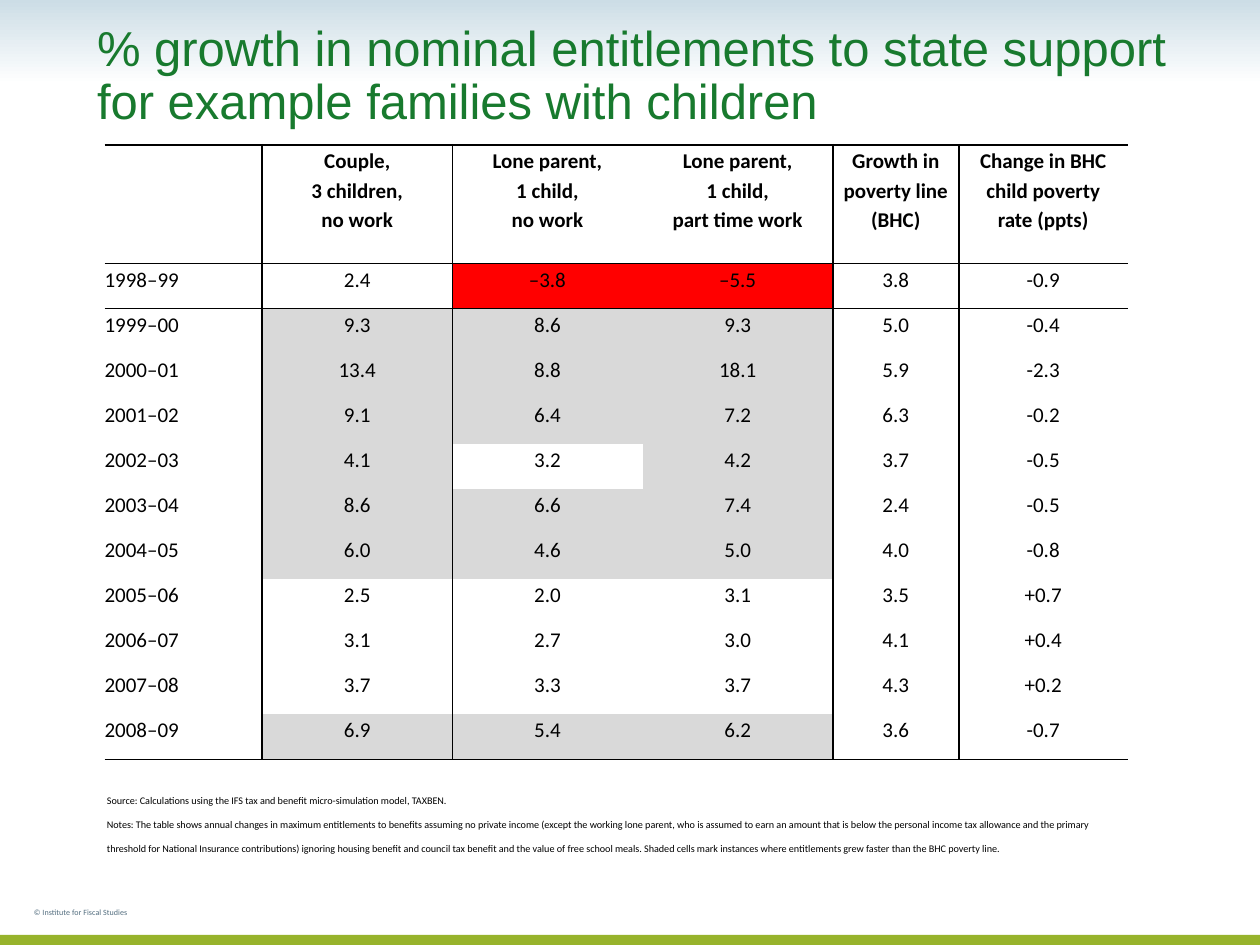
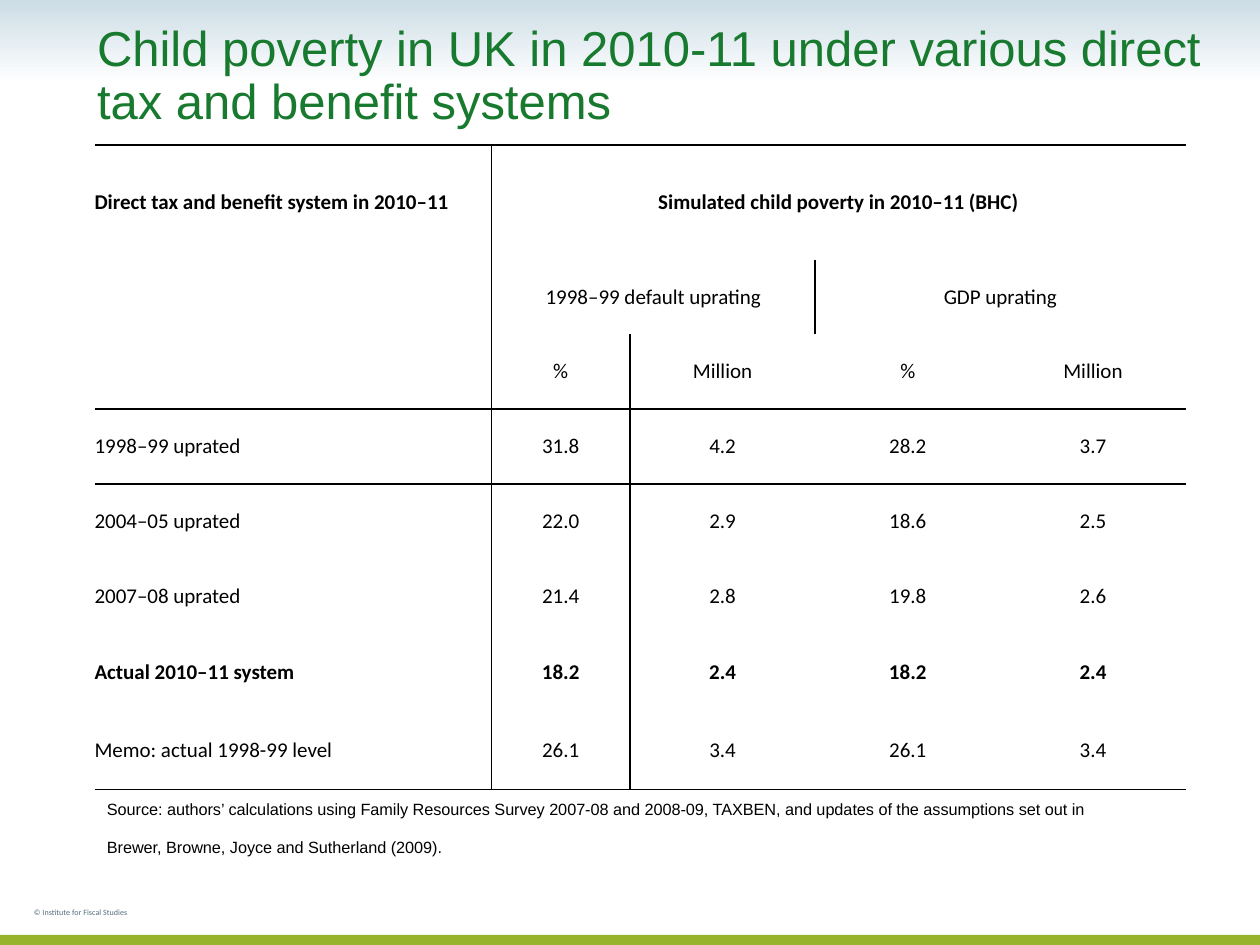
from pptx import Presentation
from pptx.dml.color import RGBColor
from pptx.enum.shapes import MSO_SHAPE as SHAPE
from pptx.enum.text import MSO_ANCHOR as ANCHOR, MSO_AUTO_SIZE as AUTO, PP_ALIGN as ALIGN
from pptx.oxml.ns import qn
from pptx.util import Inches, Pt
from lxml.etree import SubElement

GREEN, LIME, SLATE, SKY = "187A2E", "97B32C", "526D7F", "CCDDE6"
BLACK, WHITE, GREY, RED = "000000", "FFFFFF", "D9D9D9", "FF0000"
PLAIN_TABLE = "{2D5ABB26-0587-4C30-8999-92F81FD0307C}"

ENTITLEMENT_HEADS = [
    "", "Couple,\v3 children,\vno work", "Lone parent,\v1 child,\vno work",
    "Lone parent,\v1 child,\vpart time work", "Growth in poverty line (BHC)",
    "Change in BHC child poverty rate (ppts)",
]
ENTITLEMENT_YEARS = [
    ["1998–99", "2.4", "–3.8", "–5.5", "3.8", "-0.9"],
    ["1999–00", "9.3", "8.6", "9.3", "5.0", "-0.4"],
    ["2000–01", "13.4", "8.8", "18.1", "5.9", "-2.3"],
    ["2001–02", "9.1", "6.4", "7.2", "6.3", "-0.2"],
    ["2002–03", "4.1", "3.2", "4.2", "3.7", "-0.5"],
    ["2003–04", "8.6", "6.6", "7.4", "2.4", "-0.5"],
    ["2004–05", "6.0", "4.6", "5.0", "4.0", "-0.8"],
    ["2005–06", "2.5", "2.0", "3.1", "3.5", "+0.7"],
    ["2006–07", "3.1", "2.7", "3.0", "4.1", "+0.4"],
    ["2007–08", "3.7", "3.3", "3.7", "4.3", "+0.2"],
    ["2008–09", "6.9", "5.4", "6.2", "3.6", "-0.7"],
]
POVERTY_ROWS = [
    ["Direct tax and benefit system in 2010–11",
     "Simulated child poverty in 2010–11 (BHC)", "", "", ""],
    ["", "1998–99 default uprating", "", "GDP uprating", ""],
    ["", "%", "Million", "%", "Million"],
    ["1998–99 uprated", "31.8", "4.2", "28.2", "3.7"],
    ["2004–05 uprated", "22.0", "2.9", "18.6", "2.5"],
    ["2007–08 uprated", "21.4", "2.8", "19.8", "2.6"],
    ["Actual 2010–11 system", "18.2", "2.4", "18.2", "2.4"],
    ["Memo: actual 1998-99 level", "26.1", "3.4", "26.1", "3.4"],
]


def rgb(value):
    return RGBColor.from_string(value)


def write(frame, text, size=12, font="Calibri", color=BLACK, bold=False,
          align=ALIGN.LEFT, spacing=None, after=None, lowered=False):
    frame.word_wrap = True
    for index, line in enumerate(text.split("\n")):
        paragraph = frame.add_paragraph() if index else frame.paragraphs[0]
        paragraph.text = line
        paragraph.alignment = align
        if spacing:
            paragraph.line_spacing = spacing
        if after:
            paragraph.space_after = Pt(after)
        for run in paragraph.runs:
            run.font.size, run.font.name, run.font.bold = Pt(size), font, bold
            run.font.color.rgb = rgb(color)
            if lowered:
                run._r.get_or_add_rPr().set("baseline", "-25000")
        for line_break in paragraph._p.findall(qn("a:br")):
            SubElement(line_break, qn("a:rPr"), sz=str(size * 100))


def add_band(slide, top, height):
    band = slide.shapes.add_shape(SHAPE.RECTANGLE, 0, Inches(top), Inches(10), Inches(height))
    band.shadow.inherit = False
    band.line.fill.background()
    return band


def decorate_master(prs, slide):
    sky = add_band(slide, 0, 0.67)
    sky.fill.gradient()
    sky.fill.gradient_angle = 270
    for stop, color, position in zip(sky.fill.gradient_stops, (SKY, WHITE), (0, 1)):
        stop.color.rgb = rgb(color)
        stop.position = position
    base = add_band(slide, 7.42, 0.08)
    base.fill.solid()
    base.fill.fore_color.rgb = rgb(LIME)
    for order, band in enumerate((sky, base)):
        band._element.nvSpPr.cNvPr.set("id", str(101 + order))
        prs.slide_master.shapes.element.insert(2 + order, band._element)


def add_text(slide, box, text, anchor=ANCHOR.TOP, **style):
    area = slide.shapes.add_textbox(*map(Inches, box))
    area.text_frame.vertical_anchor = anchor
    write(area.text_frame, text, **style)


def add_titled_slide(prs, heading):
    slide = prs.slides.add_slide(prs.slide_layouts[5])
    title = slide.shapes.title
    title.left, title.top, title.width, title.height = map(Inches, (0.67, 0, 9.06, 1.08))
    frame = title.text_frame
    frame.auto_size = AUTO.NONE
    frame.vertical_anchor = ANCHOR.BOTTOM
    write(frame, heading, size=28, font="Arial", color=GREEN, spacing=0.9)
    add_text(slide, (0.17, 7.08, 2.75, 0.25), "© Institute for Fiscal Studies",
             size=8, color=SLATE, lowered=True)
    return slide


def rule_cell(cell, sides):
    properties = cell._tc.get_or_add_tcPr()
    for side, width in sides.items():
        if width:
            line = SubElement(properties, qn(f"a:ln{side}"), w=str(Pt(width)))
            fill = SubElement(line, qn("a:solidFill"))
            SubElement(fill, qn("a:srgbClr"), val=BLACK)


def add_ruled_table(slide, box, rows, widths, heights, dividers, head_rows,
                    bold_rows, anchor, spacing=None, merges=(), shade=None, last_inset=0):
    table = slide.shapes.add_table(len(rows), len(widths), *map(Inches, box)).table
    table.first_row = table.horz_banding = False
    table._tbl.tblPr.find(qn("a:tableStyleId")).text = PLAIN_TABLE
    for column, width in zip(table.columns, widths):
        column.width = Inches(width)
    for row, height in zip(table.rows, heights):
        row.height = Inches(height)
    across = {0: 1.5, head_rows: 1, len(rows): 1}
    down = dict.fromkeys(dividers, 1)
    for r, values in enumerate(rows):
        for c, value in enumerate(values):
            cell = table.cell(r, c)
            inset = Inches(last_inset if c == len(widths) - 1 else 0)
            cell.margin_left = cell.margin_right = inset
            cell.margin_top = cell.margin_bottom = 0
            cell.vertical_anchor = anchor
            rule_cell(cell, {"L": down.get(c), "R": down.get(c + 1),
                             "T": across.get(r), "B": across.get(r + 1)})
            color = shade(r, c) if shade else None
            if color:
                cell.fill.solid()
                cell.fill.fore_color.rgb = rgb(color)
            else:
                cell.fill.background()
            if value:
                write(cell.text_frame, value, bold=r in bold_rows, spacing=spacing,
                      after=3, align=ALIGN.CENTER if c else ALIGN.LEFT)
    for r, first, last in merges:
        table.cell(r, first).merge(table.cell(r, last))


def entitlement_shade(r, c):
    if r == 0 or c not in (1, 2, 3):
        return None
    year = ENTITLEMENT_YEARS[r - 1]
    growth = float(year[c].replace("–", "-"))
    if growth < 0:
        return RED
    return GREY if growth > float(year[4]) else None


def build_entitlements(prs):
    slide = add_titled_slide(
        prs, "% growth in nominal entitlements to state support for example families with children")
    add_text(slide, (0.75, 6.03, 8.19, 0.94),
             "Source: Calculations using the IFS tax and benefit micro-simulation model, TAXBEN.\n"
             "Notes: The table shows annual changes in maximum entitlements to benefits assuming "
             "no private income (except the working lone parent, who is assumed to earn an amount "
             "that is below the personal income tax allowance and the primary threshold for "
             "National Insurance contributions) ignoring housing benefit and council tax benefit "
             "and the value of free school meals. Shaded cells mark instances where entitlements "
             "grew faster than the BHC poverty line.",
             anchor=ANCHOR.MIDDLE, size=10, lowered=True)
    head, height, years = 0.94, 4.88, len(ENTITLEMENT_YEARS)
    add_ruled_table(
        slide, (0.83, 1.15, 8.11, height), [ENTITLEMENT_HEADS] + ENTITLEMENT_YEARS,
        widths=[1.25, 1.51, 1.51, 1.51, 1, 1.34],
        heights=[head] + [(height - head) / years] * years,
        dividers=(1, 4, 5), head_rows=1, bold_rows=(0,), anchor=ANCHOR.TOP,
        spacing=1.15, shade=entitlement_shade, last_inset=0.07)
    return slide


def build_poverty(prs):
    slide = add_titled_slide(
        prs, "Child poverty in UK in 2010-11 under various direct tax and benefit systems")
    add_text(slide, (0.75, 6.27, 8.19, 0.46),
             "Source: authors’ calculations using Family Resources Survey 2007-08 and 2008-09, "
             "TAXBEN, and updates of the assumptions set out in Brewer, Browne, Joyce and "
             "Sutherland (2009).",
             anchor=ANCHOR.MIDDLE, size=16, font="Arial", lowered=True)
    head, foot, height = 0.91, 0.62, 5.12
    middle = (height - head - 2 * foot) / 5
    add_ruled_table(
        slide, (0.75, 1.15, 8.66, height), POVERTY_ROWS,
        widths=[3.15, 1.1, 1.47, 1.47, 1.47],
        heights=[head] + [middle] * 5 + [foot] * 2,
        dividers=(1,), head_rows=3, bold_rows=(0, 6), anchor=ANCHOR.MIDDLE,
        merges=((0, 1, 4), (1, 1, 2), (1, 3, 4)))


def main():
    prs = Presentation()
    prs.slide_width, prs.slide_height = Inches(10), Inches(7.5)
    decorate_master(prs, build_entitlements(prs))
    build_poverty(prs)
    prs.save("out.pptx")


if __name__ == "__main__":
    main()
